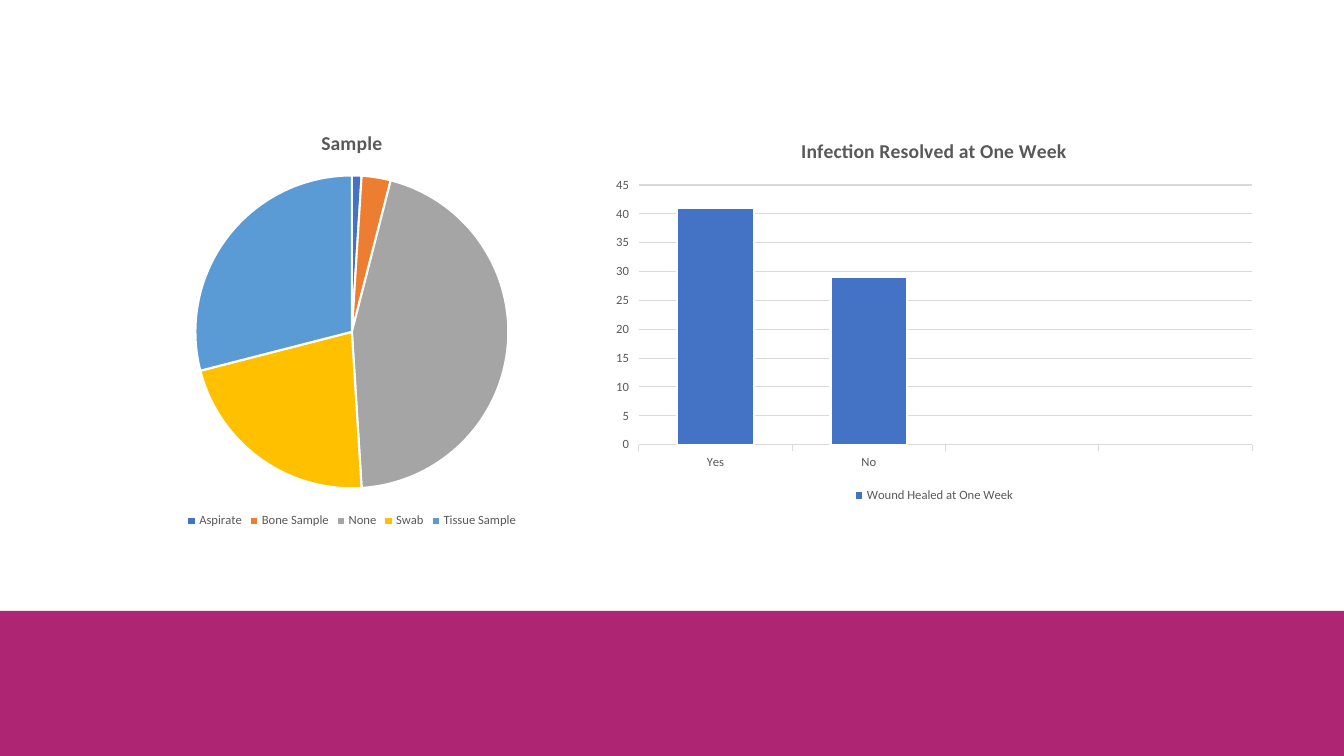
"""Build a slide with a sample pie and an infection column chart."""
from dataclasses import dataclass

from pptx import Presentation
from pptx.chart.chart import Chart
from pptx.chart.data import CategoryChartData
from pptx.dml.color import RGBColor
from pptx.enum.chart import XL_CHART_TYPE, XL_LEGEND_POSITION, XL_TICK_MARK
from pptx.enum.shapes import MSO_SHAPE
from pptx.slide import Slide
from pptx.text.text import Font
from pptx.util import Inches, Pt

WHITE = RGBColor(0xFF, 0xFF, 0xFF)
PLUM = RGBColor(0xAE, 0x25, 0x73)
TEXT = RGBColor(0x59, 0x59, 0x59)
GRID = RGBColor(0xD9, 0xD9, 0xD9)
BLUE = RGBColor(0x44, 0x72, 0xC4)
ORANGE = RGBColor(0xED, 0x7D, 0x31)
GRAY = RGBColor(0xA5, 0xA5, 0xA5)
GOLD = RGBColor(0xFF, 0xC0, 0x00)
SKY = RGBColor(0x5B, 0x9B, 0xD5)


@dataclass
class Plot:
    """Content and place of one chart."""
    kind: XL_CHART_TYPE
    box: tuple[float, float, float, float]
    title: str
    name: str
    cats: list[str]
    vals: list[int | None]


SAMPLE = Plot(XL_CHART_TYPE.PIE, (0.43, 1.11, 6.12, 4.17), "Sample", "Series 1",
              ["Aspirate", "Bone Sample", "None", "Swab", "Tissue Sample"],
              [1, 3, 45, 22, 29])
HEALED = Plot(XL_CHART_TYPE.COLUMN_CLUSTERED, (5.98, 1.2, 6.57, 3.83),
              "Infection Resolved at One Week", "Wound Healed at One Week",
              ["Yes", "No", "", ""], [41, 29, None, None])


def style(font: Font, size: float, bold: bool = False) -> None:
    """Set the shared chart font."""
    font.name = "Calibri"
    font.size = Pt(size)
    font.bold = bold
    font.color.rgb = TEXT


def edge(line, color: RGBColor, width: float) -> None:
    """Set the colour and width of a line."""
    line.color.rgb = color
    line.width = Pt(width)


def draw(slide: Slide, plot: Plot) -> Chart:
    """Add a chart with its title and legend."""
    data = CategoryChartData()
    data.categories = plot.cats
    data.add_series(plot.name, plot.vals)
    box = [Inches(side) for side in plot.box]
    chart = slide.shapes.add_chart(plot.kind, *box, data).chart
    style(chart.font, 9)
    chart.has_title = True
    frame = chart.chart_title.text_frame
    frame.text = plot.title
    style(frame.paragraphs[0].runs[0].font, 14, True)
    chart.has_legend = True
    chart.legend.position = XL_LEGEND_POSITION.BOTTOM
    chart.legend.include_in_layout = False
    style(chart.legend.font, 9)
    return chart


def tint(chart: Chart, colors: list[RGBColor]) -> None:
    """Colour each slice of the pie."""
    for index, color in enumerate(colors):
        form = chart.plots[0].series[0].points[index].format
        form.fill.solid()
        form.fill.fore_color.rgb = color
        edge(form.line, WHITE, 1.5)


def trim(chart: Chart) -> None:
    """Format the columns and both axes."""
    bars = chart.plots[0]
    bars.gap_width = 100
    bars.vary_by_categories = False
    form = bars.series[0].format
    form.fill.solid()
    form.fill.fore_color.rgb = BLUE
    edge(form.line, WHITE, 1.5)
    for axis in (chart.category_axis, chart.value_axis):
        axis.major_tick_mark = XL_TICK_MARK.OUTSIDE
        style(axis.tick_labels.font, 9)
    edge(chart.category_axis.format.line, GRID, 0.75)
    scale = chart.value_axis
    scale.minimum_scale, scale.maximum_scale, scale.major_unit = 0, 45, 5
    scale.format.line.fill.background()
    edge(scale.major_gridlines.format.line, GRID, 0.75)


def main() -> None:
    """Build and save the slide."""
    deck = Presentation()
    deck.slide_width, deck.slide_height = Inches(13.33), Inches(7.5)
    slide = deck.slides.add_slide(deck.slide_layouts[6])
    band = slide.shapes.add_shape(MSO_SHAPE.RECTANGLE, 0, Inches(6.06),
                                  deck.slide_width, Inches(1.44))
    band.shadow.inherit = False
    band.fill.solid()
    band.fill.fore_color.rgb = PLUM
    band.line.fill.background()
    tint(draw(slide, SAMPLE), [BLUE, ORANGE, GRAY, GOLD, SKY])
    trim(draw(slide, HEALED))
    deck.save("out.pptx")


if __name__ == "__main__":
    main()
